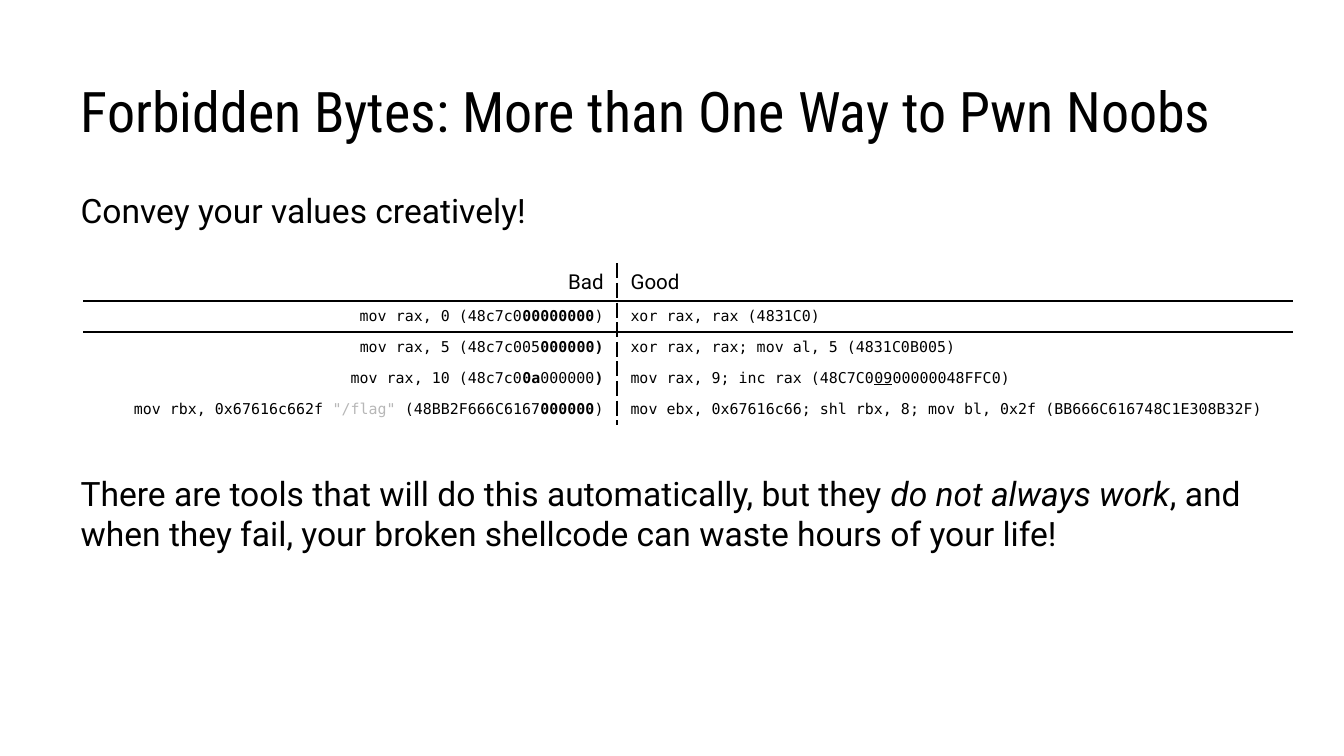
import pptx
import pptx.dml.color
import pptx.enum.text
import pptx.oxml
import pptx.oxml.ns
import pptx.util
from lxml import etree

Pt = pptx.util.Pt
ALIGN = pptx.enum.text.PP_ALIGN
ANCHOR = pptx.enum.text.MSO_ANCHOR
qn = pptx.oxml.ns.qn

TITLE = {"name": "Roboto Condensed", "size": Pt(30)}
BODY = {"name": "Roboto", "size": Pt(18)}
HEAD = {"name": "Roboto", "size": Pt(11)}
CODE = {"name": "DejaVu Sans Mono", "size": Pt(8)}
BOLD = {"bold": True}
NO_GRID = "{2D5ABB26-0587-4C30-8999-92F81FD0307C}"

HEADER = ([("Bad", {})], [("Good", {})])
ROWS = [
    ([("mov rax, 0 (48c7c0", {}), ("00000000", BOLD), (")", {})],
     [("xor rax, rax (4831C0)", {})]),
    ([("mov rax, 5 (48c7c005", {}), ("000000)", BOLD)],
     [("xor rax, rax; mov al, 5 (4831C0B005)", {})]),
    ([("mov rax, 10 (48c7c0", {}), ("0a", BOLD), ("000000", {}), (")", BOLD)],
     [("mov rax, 9; inc rax (48C7C0", {}), ("09", {"underline": True}),
      ("00000048FFC0)", {})]),
    ([("mov rbx, 0x67616c662f ", {}), ('"/flag"', {"color": "B7B7B7"}),
      (" (48BB2F666C6167", {}), ("000000", BOLD), (")", {})],
     [("mov ebx, 0x67616c66; shl rbx, 8; mov bl, 0x2f (BB666C616748C1E308B32F)", {})]),
]
PARAGRAPHS = [
    [("Convey your values creatively!", {})],
    [("There are tools that will do this automatically, but they ", {}),
     ("do not always work", {"italic": True}),
     (", and when they fail, your broken shellcode can waste hours of your life!", {})],
]


def rgb(color):
    return pptx.dml.color.RGBColor.from_string(color)


def set_attrs(obj, values):
    for key, value in values.items():
        setattr(obj, key, value)


def add_runs(p, runs, base):
    for text, extra in runs:
        r = p.add_run()
        r.text = text
        fmt = {**base, **extra}
        r.font.color.rgb = rgb(fmt.pop("color", "000000"))
        set_attrs(r.font, fmt)


def place(sp, box, anchor):
    set_attrs(sp, dict(zip(("left", "top", "width", "height"), map(Pt, box))))
    tf = sp.text_frame
    set_attrs(tf, {"word_wrap": True, "vertical_anchor": anchor,
                   "auto_size": pptx.enum.text.MSO_AUTO_SIZE.NONE})
    for side in ("left", "top", "right", "bottom"):
        setattr(tf, f"margin_{side}", Pt(7.2))
    return tf


def add_title(s, box):
    p = place(s.shapes.title, box, ANCHOR.BOTTOM).paragraphs[0]
    p.alignment = ALIGN.LEFT
    add_runs(p, [("Forbidden Bytes: More than One Way to Pwn Noobs", {})], TITLE)


def add_body(s, box, gap):
    tf = place(s.placeholders[1], box, ANCHOR.TOP)
    for i, runs in enumerate(PARAGRAPHS):
        p = tf.add_paragraph() if i else tf.paragraphs[0]
        set_attrs(p, {"alignment": ALIGN.LEFT, "space_before": Pt(gap * i)})
        pPr = p._p.get_or_add_pPr()
        pPr.set("marL", "0")
        pPr.set("indent", "0")
        etree.SubElement(pPr, qn("a:buNone"))
        add_runs(p, runs, BODY)


def add_border(cell, side, width, dash):
    ln = etree.SubElement(cell._tc.get_or_add_tcPr(), qn(f"a:ln{side}"), w=str(Pt(width)))
    fill = etree.SubElement(ln, qn("a:solidFill"))
    etree.SubElement(fill, qn("a:srgbClr"), val="000000")
    etree.SubElement(ln, qn("a:prstDash"), val=dash)


def add_code_table(s, box, split, head_height):
    x, y, w, h = box
    rows = [HEADER] + ROWS
    frame = s.shapes.add_table(len(rows), 2, *map(Pt, box))
    tbl = frame.table
    set_attrs(tbl, {"first_row": False, "horz_banding": False})
    next(frame._element.iter(qn("a:tableStyleId"))).text = NO_GRID
    for col, width in zip(tbl.columns, (split, w - split)):
        col.width = Pt(width)
    for i, row in enumerate(rows):
        tbl.rows[i].height = Pt((h - head_height) / len(ROWS) if i else head_height)
        for j, runs in enumerate(row):
            cell = tbl.cell(i, j)
            set_attrs(cell, {"margin_left": Pt(7.2), "margin_right": Pt(7.2),
                             "margin_top": Pt(3.6), "margin_bottom": Pt(3.6)})
            add_border(cell, "L" if j else "R", 0.75, "dash")
            if i < 2:
                add_border(cell, "T" if i else "B", 1.5, "solid")
            cell.fill.background()
            p = cell.text_frame.paragraphs[0]
            p.alignment = ALIGN.LEFT if j else ALIGN.RIGHT
            add_runs(p, runs, CODE if i else HEAD)


def main():
    prs = pptx.Presentation()
    set_attrs(prs, {"slide_width": Pt(720), "slide_height": Pt(405)})
    s = prs.slides.add_slide(prs.slide_layouts[1])
    add_title(s, (36, 16.5, 648, 67.5))
    add_body(s, (36, 94.5, 648, 293), 130)
    add_code_table(s, (44.6, 141.1, 648, 86.4), 286, 20)
    prs.save("out.pptx")


if __name__ == "__main__":
    main()
